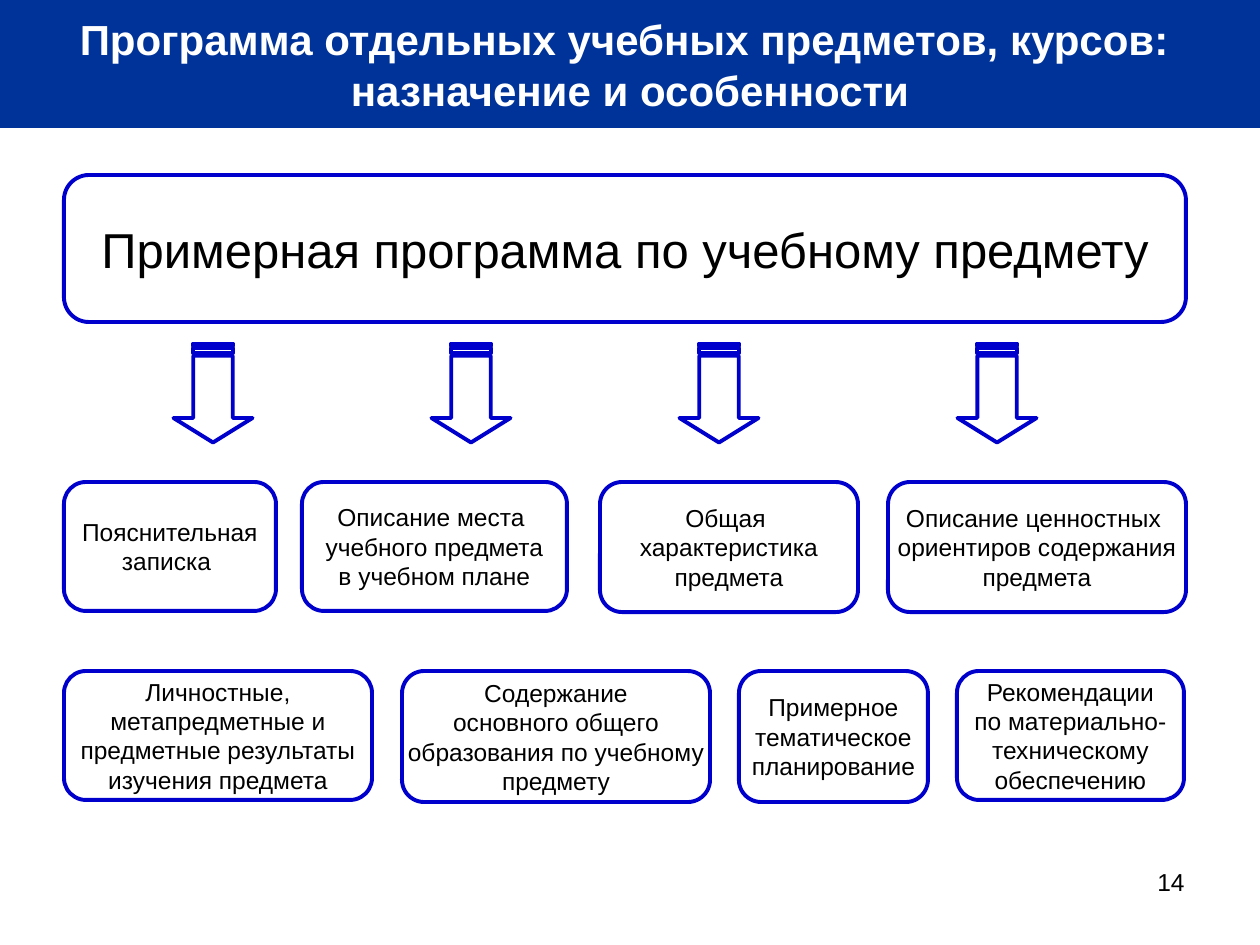
from dataclasses import dataclass

import pptx
import pptx.dml.color
import pptx.enum.shapes
import pptx.enum.text
import pptx.util

EMU_PER_PX = 914400 / 126
SLIDE_WIDTH, SLIDE_HEIGHT = 1260, 945
BLUE, NAVY, WHITE, BLACK = "0000CC", "003399", "FFFFFF", "000000"
ALIGN = pptx.enum.text.PP_ALIGN
ANCHOR = pptx.enum.text.MSO_ANCHOR
PRESET = pptx.enum.shapes.MSO_SHAPE


@dataclass(frozen=True)
class Section:
    left: int
    top: int
    width: int
    height: int
    lines: tuple[str, ...]
    size: int = 14


PROGRAM = Section(64, 175, 1122, 147, ("Примерная программа по учебному предмету",), 28)
SECTIONS = (
    Section(64, 482, 212, 129, ("Пояснительная", "записка ")),
    Section(302, 482, 265, 129, ("Описание места ", "учебного предмета", "в учебном плане")),
    Section(600, 482, 258, 130, ("Общая ", "характеристика", "предмета")),
    Section(888, 482, 298, 130,
            ("Описание ценностных ", "ориентиров содержания", "предмета")),
    Section(64, 671, 308, 129,
            ("Личностные,", "метапредметные и", "предметные результаты", "изучения предмета")),
    Section(402, 671, 308, 131,
            ("Содержание", "основного общего", "образования по учебному", "предмету")),
    Section(739, 671, 189, 131, ("Примерное", "тематическое", "планирование")),
    Section(957, 671, 227, 129,
            ("Рекомендации", "по материально-", "техническому", "обеспечению")),
)
ARROW_CENTERS = (213, 471, 719, 997)
ARROW_MIDDLE, ARROW_LENGTH, ARROW_BREADTH = 393, 99, 79


def px(length: float) -> int:
    return round(length * EMU_PER_PX)


def color(code: str) -> pptx.dml.color.RGBColor:
    return pptx.dml.color.RGBColor.from_string(code)


def box(left: float, top: float, width: float, height: float) -> tuple[int, ...]:
    return tuple(px(length) for length in (left, top, width, height))


def apply_format(target, values: dict) -> None:
    for name, value in values.items():
        setattr(target, name, value)


def write_lines(frame, lines: tuple[str, ...], size: int, ink: str = BLACK,
                bold: bool = False, alignment=ALIGN.CENTER) -> None:
    """Write each line as its own paragraph."""
    for index, line in enumerate(lines):
        paragraph = frame.add_paragraph() if index else frame.paragraphs[0]
        paragraph.alignment = alignment
        run = paragraph.add_run()
        run.text = line
        apply_format(run.font, {"name": "Arial", "size": pptx.util.Pt(size), "bold": bold})
        run.font.color.rgb = color(ink)


def add_outlined(slide, preset, bounds: tuple[int, ...], adjustments: tuple[float, ...]):
    """Add an unfilled preset shape with the blue outline."""
    outlined = slide.shapes.add_shape(preset, *bounds)
    outlined.shadow.inherit = False
    outlined.fill.background()
    outlined.line.color.rgb = color(BLUE)
    outlined.line.width = pptx.util.Pt(2.25)
    for index, adjustment in enumerate(adjustments):
        outlined.adjustments[index] = adjustment
    return outlined


def draw_section(slide, section: Section) -> None:
    bounds = box(section.left, section.top, section.width, section.height)
    frame = add_outlined(slide, PRESET.ROUNDED_RECTANGLE, bounds, (0.17,)).text_frame
    apply_format(frame, {
        "margin_left": 0, "margin_right": 0, "margin_top": 0, "margin_bottom": 0,
        "word_wrap": False, "vertical_anchor": ANCHOR.MIDDLE,
    })
    write_lines(frame, section.lines, section.size)


def draw_down_arrow(slide, center: int) -> None:
    bounds = box(center - ARROW_LENGTH / 2, ARROW_MIDDLE - ARROW_BREADTH / 2,
                 ARROW_LENGTH, ARROW_BREADTH)
    arrow = add_outlined(slide, PRESET.STRIPED_RIGHT_ARROW, bounds, (0.5, 0.31))
    arrow.rotation = 90


def draw_title(slide) -> None:
    title = slide.shapes.title
    apply_format(title, dict(zip(("left", "top", "width", "height"),
                                 box(0, 0, SLIDE_WIDTH, 128))))
    title.fill.solid()
    title.fill.fore_color.rgb = color(NAVY)
    apply_format(title.text_frame, {
        "word_wrap": False, "vertical_anchor": ANCHOR.MIDDLE,
        "auto_size": pptx.enum.text.MSO_AUTO_SIZE.NONE,
    })
    write_lines(title.text_frame,
                ("Программа отдельных учебных предметов, курсов: ", "назначение и особенности"),
                24, WHITE, bold=True)


def draw_page_number(slide) -> None:
    frame = slide.shapes.add_textbox(*box(903, 861, 294, 65)).text_frame
    frame.word_wrap = True
    write_lines(frame, ("14",), 14, alignment=ALIGN.RIGHT)


def main() -> None:
    presentation = pptx.Presentation()
    presentation.slide_width, presentation.slide_height = px(SLIDE_WIDTH), px(SLIDE_HEIGHT)
    slide = presentation.slides.add_slide(presentation.slide_layouts.get_by_name("Title Only"))
    draw_title(slide)
    for section in (PROGRAM, *SECTIONS):
        draw_section(slide, section)
    for center in ARROW_CENTERS:
        draw_down_arrow(slide, center)
    draw_page_number(slide)
    presentation.save("out.pptx")


if __name__ == "__main__":
    main()
